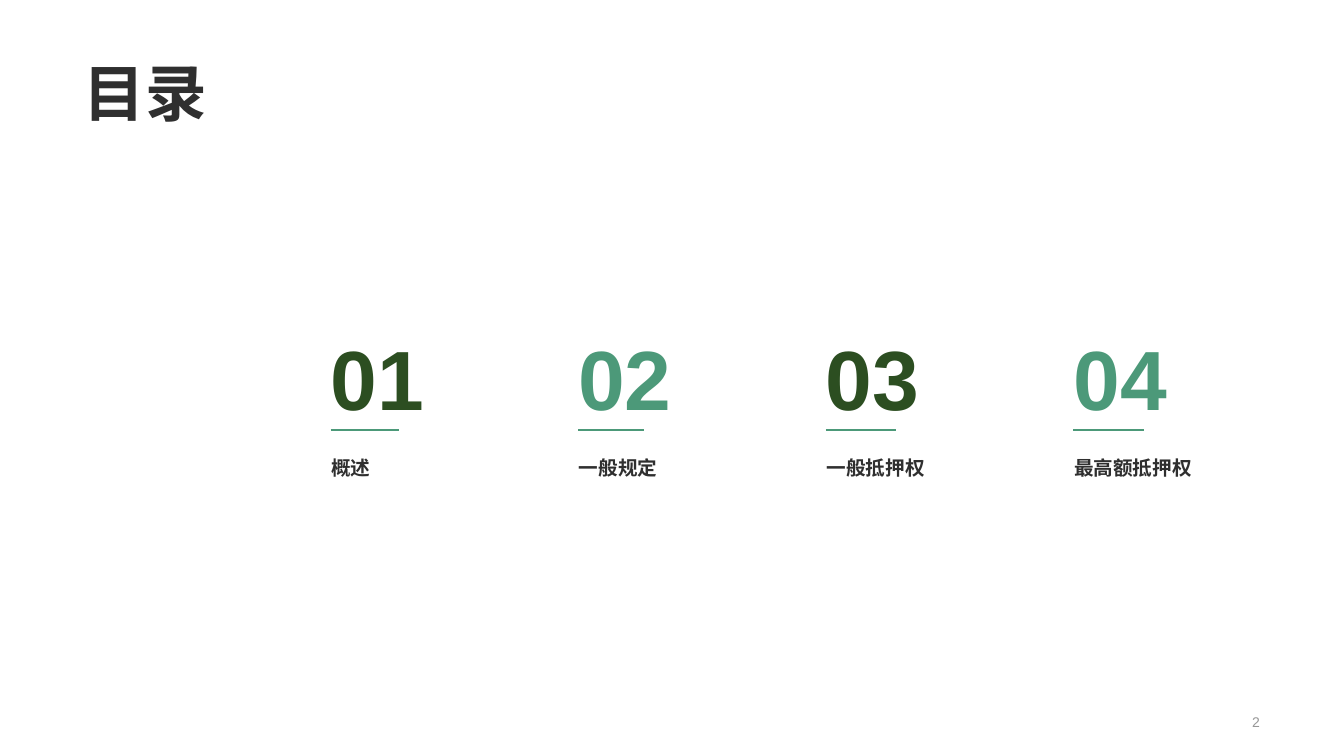
from pptx import Presentation
from pptx.dml.color import RGBColor
from pptx.enum.shapes import MSO_CONNECTOR
from pptx.enum.text import MSO_ANCHOR as Anchor, MSO_AUTO_SIZE as AutoSize, PP_ALIGN as Align
from pptx.oxml.ns import qn
from pptx.util import Cm, Pt
from lxml import etree

WHITE = RGBColor(0xFF, 0xFF, 0xFF)
CHARCOAL = RGBColor(0x2F, 0x2F, 0x2F)
GRAY = RGBColor(0x97, 0x97, 0x97)
DARK_GREEN = RGBColor(0x2C, 0x4E, 0x21)
GREEN = RGBColor(0x4C, 0x99, 0x79)
FONT = "Arial"

# Heading and underline length in cm
CHAPTERS = [
    ("概述", 1.73),
    ("一般规定", 1.65),
    ("一般抵押权", 1.78),
    ("最高额抵押权", 1.78),
]
CHAPTER_PITCH = 6.24


def write_text(shape, text, size, color, bold=False, align=Align.LEFT,
               anchor=Anchor.MIDDLE, wrap=True, auto_size=AutoSize.NONE):
    frame = shape.text_frame
    frame.word_wrap = wrap
    frame.auto_size = auto_size
    frame.vertical_anchor = anchor
    paragraph = frame.paragraphs[0]
    paragraph.alignment = align
    run = paragraph.add_run()
    run.text = text
    run.font.name = FONT
    run.font.size = Pt(size)
    run.font.bold = bold
    run.font.color.rgb = color
    return paragraph


def place_title(slide, text, left, top, width, height):
    title = slide.shapes.title
    title.left, title.top = Cm(left), Cm(top)
    title.width, title.height = Cm(width), Cm(height)
    paragraph = write_text(title, text, 44, CHARCOAL, bold=True, anchor=Anchor.BOTTOM)
    paragraph.line_spacing = 0.9


def add_page_number(slide, number, left, top, width, height):
    box = slide.shapes.add_textbox(Cm(left), Cm(top), Cm(width), Cm(height))
    write_text(box, str(number), 10, GRAY, align=Align.RIGHT)


def add_chapter(slide, number, heading, underline_length, left, top):
    """Group a large number, its underline and the heading below it."""
    shapes = slide.shapes.add_group_shape().shapes

    number_box = shapes.add_textbox(Cm(left), Cm(top), Cm(2.9), Cm(2.82))
    number_color = DARK_GREEN if number % 2 else GREEN
    write_text(number_box, f"{number:02d}", 60, number_color, bold=True,
               wrap=False, auto_size=AutoSize.SHAPE_TO_FIT_TEXT)

    heading_box = shapes.add_textbox(Cm(left + 0.02), Cm(top + 3.25), Cm(4.93), Cm(0.86))
    write_text(heading_box, heading, 14, CHARCOAL, bold=True, anchor=Anchor.BOTTOM,
               auto_size=AutoSize.SHAPE_TO_FIT_TEXT)

    line_left, line_top = left + 0.25, top + 2.74
    underline = shapes.add_connector(
        MSO_CONNECTOR.STRAIGHT, Cm(line_left), Cm(line_top),
        Cm(line_left + underline_length), Cm(line_top))
    underline.line.color.rgb = GREEN
    underline.line.width = Pt(1.5)
    etree.SubElement(underline._element.spPr, qn("a:effectLst"))


def add_chapters(slide, left, top):
    for index, (heading, underline_length) in enumerate(CHAPTERS):
        add_chapter(slide, index + 1, heading, underline_length,
                    left + index * CHAPTER_PITCH, top)


def build_contents_slide(presentation):
    slide = presentation.slides.add_slide(presentation.slide_layouts[5])
    slide.background.fill.solid()
    slide.background.fill.fore_color.rgb = WHITE
    place_title(slide, "目录", 1.85, 0.56, 30.18, 2.84)
    add_page_number(slide, 2, 24.61, 17.88, 7.39, 0.61)
    add_chapters(slide, 8.08, 8.1)


def main():
    presentation = Presentation()
    presentation.slide_width = Cm(33.87)
    presentation.slide_height = Cm(19.05)
    build_contents_slide(presentation)
    presentation.save("out.pptx")


if __name__ == "__main__":
    main()
